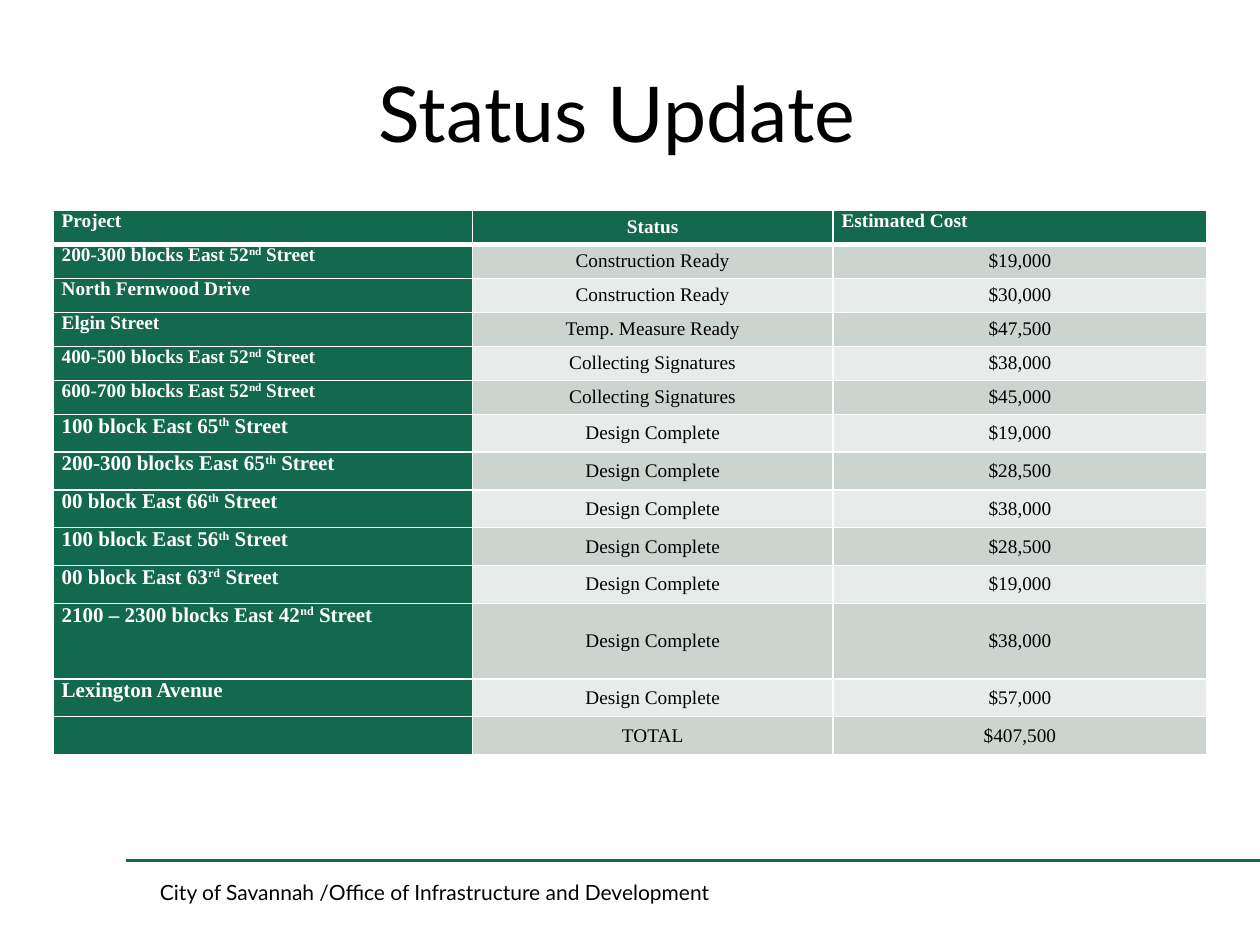
from lxml.etree import SubElement
from pptx import Presentation
from pptx.dml.color import RGBColor
from pptx.enum.shapes import MSO_CONNECTOR
from pptx.enum.text import MSO_ANCHOR as ANCHOR, PP_ALIGN as ALIGN
from pptx.oxml.ns import qn
from pptx.util import Inches, Pt

GREEN, WHITE, BLACK = "13694E", "FFFFFF", "000000"
BANDS = ["E7EBE9", "CCD4D0"]
SERIF, SANS = "Times New Roman", "Lato"

# Carets enclose superscript text.
ROWS = [
    ("Project", "Status", "Estimated Cost"),
    ("200-300 blocks East 52^nd^ Street", "Construction Ready", "$19,000"),
    ("North Fernwood Drive", "Construction Ready", "$30,000"),
    ("Elgin Street", "Temp. Measure Ready", "$47,500"),
    ("400-500 blocks East 52^nd^ Street", "Collecting Signatures", "$38,000"),
    ("600-700 blocks East 52^nd^ Street", "Collecting Signatures", "$45,000"),
    ("100 block East 65^th^ Street", "Design Complete", "$19,000"),
    ("200-300 blocks East 65^th^ Street", "Design Complete", "$28,500"),
    ("00 block East 66^th^ Street", "Design Complete", "$38,000"),
    ("100 block East 56^th^ Street", "Design Complete", "$28,500"),
    ("00 block East 63^rd^ Street", "Design Complete", "$19,000"),
    ("2100 – 2300 blocks East 42^nd^ Street", "Design Complete", "$38,000"),
    ("Lexington Avenue", "Design Complete", "$57,000"),
    ("", "TOTAL", "$407,500"),
]
COL_WIDTHS = [3.33, 2.86, 2.97]
ROW_HEIGHTS = [0.27] * 6 + [0.3] * 5 + [0.6] + [0.3] * 2


def rgb(value):
    return RGBColor.from_string(value)


def write(p, text, size, font, color=BLACK, bold=False):
    """Fill a paragraph, raising the text between carets."""
    f = p.font
    f.size, f.name, f.bold = Pt(size), font, bold
    f.color.rgb = rgb(color)
    for i, part in enumerate(text.split("^")):
        if part:
            r = p.add_run()
            r.text = part
            if i % 2:
                r._r.get_or_add_rPr().set("baseline", "30000")


prs = Presentation()
prs.slide_width, prs.slide_height = Inches(10), Inches(7.5)
s = prs.slides.add_slide(prs.slide_layouts[6])

# Footer rule
rule = s.shapes.add_connector(
    MSO_CONNECTOR.STRAIGHT, Inches(1), Inches(6.83), Inches(10), Inches(6.83))
rule.line.color.rgb = rgb(GREEN)
rule.line.width = Pt(1.5)
SubElement(rule._element.spPr, qn("a:effectLst"))

# Title and footer
footer = "City of Savannah /Office of Infrastructure and Development"
for text, box, size, align, left_inset in [
    ("Status Update", (0.65, 0.26, 8.5, 1.25), 44, ALIGN.CENTER, 0.1),
    (footer, (1.27, 6.83, 5, 0.5), 12, ALIGN.LEFT, 0),
]:
    tf = s.shapes.add_textbox(*map(Inches, box)).text_frame
    tf.word_wrap = True
    tf.vertical_anchor = ANCHOR.MIDDLE
    tf.margin_left = Inches(left_inset)
    p = tf.paragraphs[0]
    p.alignment = align
    write(p, text, size, SANS)

# Project table
table = s.shapes.add_table(
    len(ROWS), len(COL_WIDTHS), Inches(0.42), Inches(1.67),
    Inches(sum(COL_WIDTHS)), Inches(sum(ROW_HEIGHTS))).table
for col, width in zip(table.columns, COL_WIDTHS):
    col.width = Inches(width)
for row, height in zip(table.rows, ROW_HEIGHTS):
    row.height = Inches(height)

for i, texts in enumerate(ROWS):
    for j, text in enumerate(texts):
        cell = table.cell(i, j)
        cell.margin_left = cell.margin_right = Inches(0.07)
        cell.margin_top = cell.margin_bottom = 0
        tcPr = cell._tc.get_or_add_tcPr()
        for side in "LRTB":
            thick = (i, side) in [(0, "B"), (1, "T")]
            ln = SubElement(tcPr, qn(f"a:ln{side}"), w=str(Pt(3 if thick else 1)))
            fill = SubElement(ln, qn("a:solidFill"))
            SubElement(fill, qn("a:srgbClr"), val=WHITE)

        heading = i == 0 or j == 0
        cell.fill.solid()
        cell.fill.fore_color.rgb = rgb(GREEN if heading else BANDS[i % 2])
        p = cell.text_frame.paragraphs[0]
        if j == 1 or not heading:
            cell.vertical_anchor = ANCHOR.MIDDLE
            p.alignment = ALIGN.CENTER
        else:
            cell.vertical_anchor = ANCHOR.TOP
            p.alignment = ALIGN.JUSTIFY if i <= 6 else ALIGN.LEFT
        size = 12 if j == 0 and i >= 6 else 11
        write(p, text, size, SERIF, WHITE if heading else BLACK, heading)

prs.save("out.pptx")
